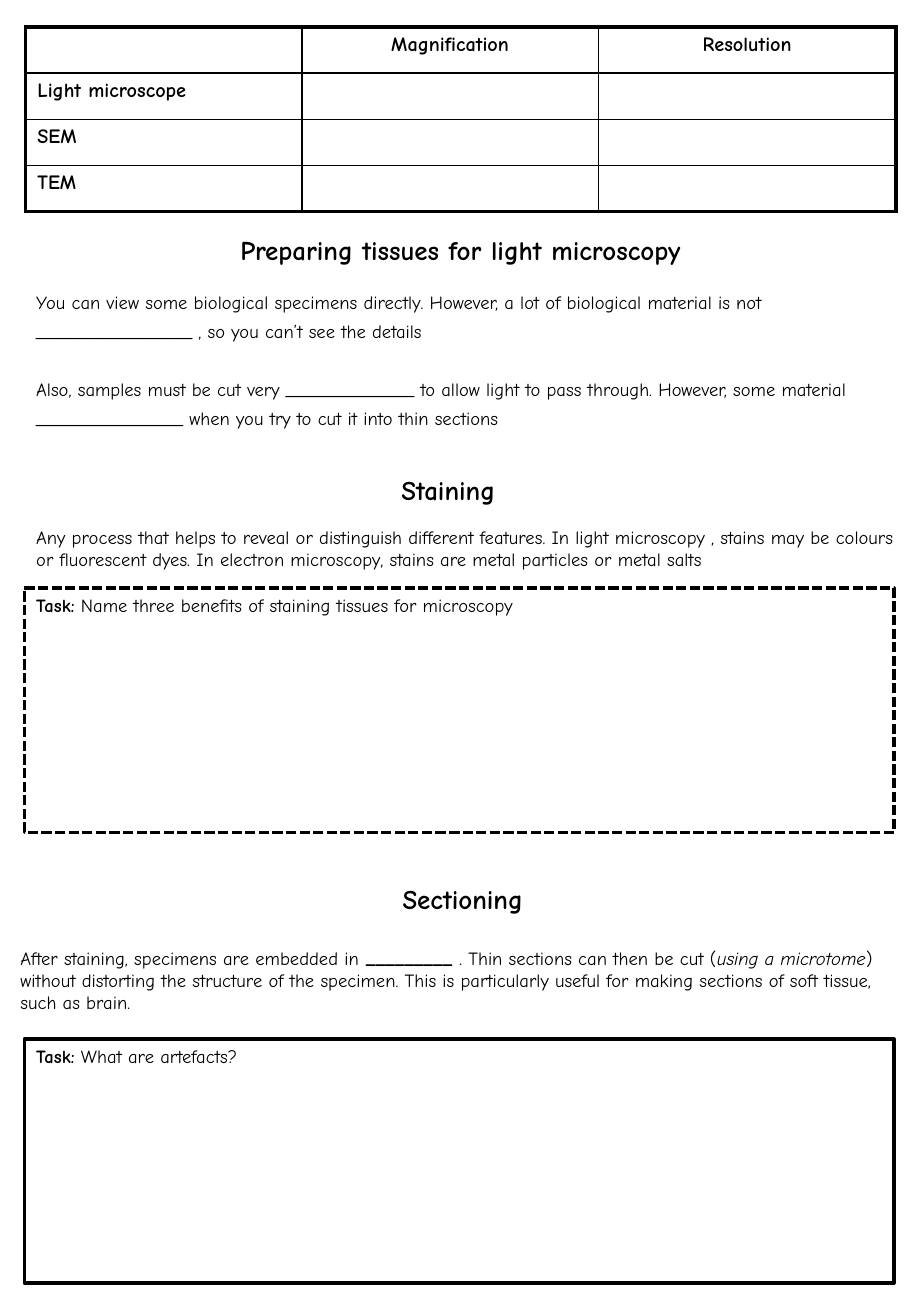
from dataclasses import dataclass

from lxml import etree
from pptx import Presentation
from pptx.dml.color import RGBColor
from pptx.enum.dml import MSO_LINE
from pptx.enum.shapes import MSO_SHAPE
from pptx.enum.text import MSO_ANCHOR, MSO_AUTO_SIZE, PP_ALIGN
from pptx.oxml.ns import qn
from pptx.util import Pt

LEFT, CENTER = PP_ALIGN.LEFT, PP_ALIGN.CENTER
TOP = MSO_ANCHOR.TOP
NO_FIT = MSO_AUTO_SIZE.NONE
RECT = MSO_SHAPE.RECTANGLE
DASH, SOLID = MSO_LINE.SQUARE_DOT, MSO_LINE.SOLID


@dataclass
class Theme:
    font: str = "Comic Neue"
    ink: RGBColor = RGBColor(0, 0, 0)
    paper: RGBColor = RGBColor(255, 255, 255)
    head: int = 16
    label: int = 12
    body: int = 11
    thick: float = 2.25
    thin: float = 1
    frame: float = 2


theme = Theme()


def write(frame, *paras, size=theme.body, bold=False, align=LEFT, lines=1.0, gap=0):
    """Each paragraph is a string or a list of (text, style), style "b", "i" or ""."""
    frame.word_wrap = True
    frame.vertical_anchor = TOP
    for n, para in enumerate(paras):
        p = frame.add_paragraph() if n else frame.paragraphs[0]
        p.alignment, p.line_spacing = align, lines
        p.space_before = Pt(gap if n else 0)
        runs = [(para, "")] if isinstance(para, str) else para
        for text, style in runs:
            run = p.add_run()
            run.text = text
            font = run.font
            font.name, font.size = theme.font, Pt(size)
            font.bold = bold or style == "b"
            font.italic = style == "i"
            font.color.rgb = theme.ink


def edge(cell, side, width):
    """Draw one border of a table cell."""
    props = cell._tc.get_or_add_tcPr()
    line = etree.SubElement(props, qn("a:ln" + side), w=str(Pt(width)))
    fill = etree.SubElement(line, qn("a:solidFill"))
    etree.SubElement(fill, qn("a:srgbClr"), val=str(theme.ink))


deck = Presentation()
deck.slide_width, deck.slide_height = Pt(540), Pt(779.76)
slide = deck.slides.add_slide(deck.slide_layouts[5])
shapes = slide.shapes

# Comparison table
labels = [
    ["", "Magnification", "Resolution"],
    ["Light microscope", "", ""],
    ["SEM", "", ""],
    ["TEM", "", ""],
]
widths, height = [164, 175.7, 176.5], 25.75
rows, cols = len(labels), len(widths)
table = shapes.add_table(
    rows, cols, Pt(15), Pt(16), Pt(sum(widths)), Pt(rows * height)).table
table.first_row = table.horz_banding = False
for c, width in enumerate(widths):
    table.columns[c].width = Pt(width)
for r, row in enumerate(labels):
    table.rows[r].height = Pt(height)
    for c, text in enumerate(row):
        cell = table.cell(r, c)
        outer = {"L": c == 0, "R": c == cols - 1, "T": r == 0, "B": r == rows - 1}
        for side, out in outer.items():
            edge(cell, side, theme.thick if out else theme.thin)
        cell.fill.solid()
        cell.fill.fore_color.rgb = theme.paper
        write(cell.text_frame, text, size=theme.label, bold=True,
              align=LEFT if r else CENTER)

# Headings
heads = [
    ("Preparing tissues for light microscopy", 15, 134.6, 516),
    ("Staining", 0, 277.2, 531.4),
    ("Sectioning", 8.6, 519.1, 531.4),
]
for n, (text, x, y, wide) in enumerate(heads):
    box = shapes.add_textbox(0, 0, 0, 0) if n else shapes.title
    box.left, box.top, box.width, box.height = Pt(x), Pt(y), Pt(wide), Pt(26.6)
    box.text_frame.auto_size = NO_FIT
    write(box.text_frame, text, size=theme.head, bold=True, align=CENTER)

# Body text
preparing = [
    "You can view some biological specimens directly. However, a lot of "
    "biological material is not _________________ , so you can’t see the details",
    "Also, samples must be cut very ______________ to allow light to pass through. "
    "However, some material ________________ when you try to cut it into thin sections",
]
staining = [
    "Any process that helps to reveal or distinguish different features. In light "
    "microscopy , stains may be colours or fluorescent dyes. In electron microscopy, "
    "stains are metal particles or metal salts",
]
sectioning = [[
    ("After staining, specimens are embedded in", ""),
    (" _________ ", "b"),
    (". Thin sections can then be cut (", ""),
    ("using a microtome", "i"),
    (") without distorting the structure of the specimen. This is particularly "
     "useful for making sections of soft tissue, such as brain.", ""),
]]
texts = [
    (preparing, 14.4, 164.9, 516.2, 92.2, 1.3),
    (staining, 14.4, 308.2, 525.6, 33.8, 1.0),
    (sectioning, 5, 557.3, 524.9, 47.5, 1.0),
]
for paras, x, y, wide, high, lines in texts:
    box = shapes.add_textbox(Pt(x), Pt(y), Pt(wide), Pt(high))
    write(box.text_frame, *paras, lines=lines, gap=17.2)

# Task boxes
tasks = [
    (" Name three benefits of staining tissues for microscopy", 348.5, DASH),
    (" What are artefacts?", 615.6, SOLID),
]
for text, y, dash in tasks:
    box = shapes.add_shape(RECT, Pt(14.4), Pt(y), Pt(515.5), Pt(144.7))
    box.shadow.inherit = False
    box.fill.solid()
    box.fill.fore_color.rgb = theme.paper
    box.line.color.rgb = theme.ink
    box.line.width = Pt(theme.frame)
    box.line.dash_style = dash
    write(box.text_frame, [("Task:", "b"), (text, "")])

deck.save("out.pptx")
